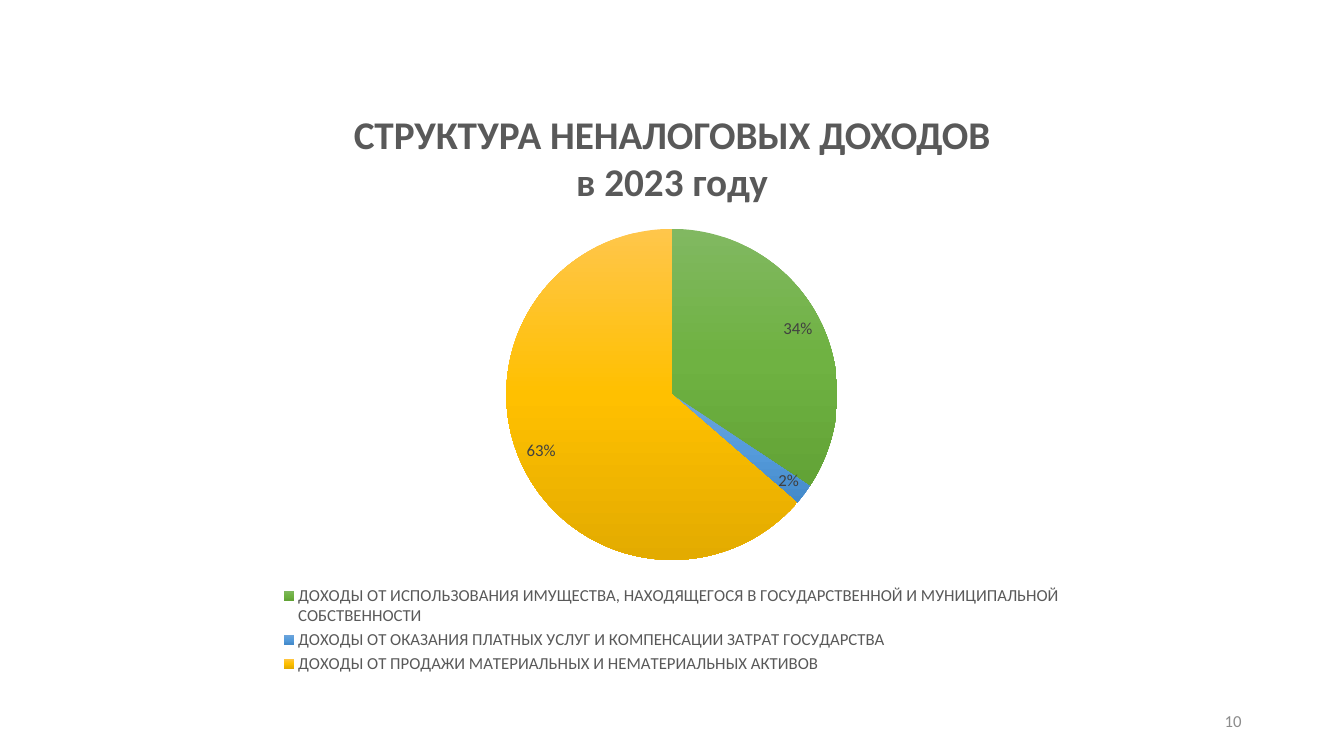
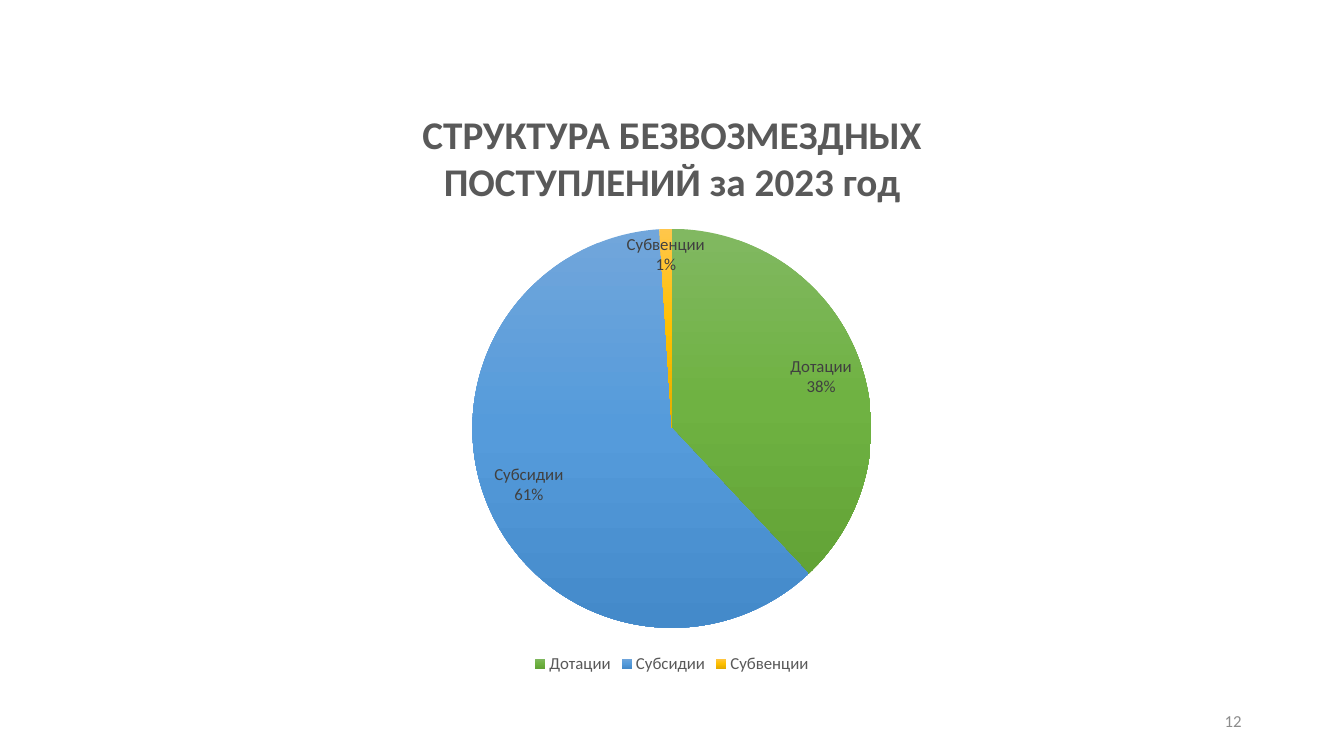
import pptx
import pptx.chart.data
import pptx.dml.color
import pptx.enum.chart
import pptx.enum.text
import pptx.oxml
import pptx.oxml.ns
import pptx.util

Pt = pptx.util.Pt
qn = pptx.oxml.ns.qn
NSDECLS = pptx.oxml.ns.nsdecls("a", "c")

FONT = "Calibri"
COLORS = {"title": "595959", "legend": "595959", "label": "404040", "number": "8C8C8C"}
SLICE_GRADIENTS = [
    ("81B861", "6FB242", "62A336"),
    ("71A6DB", "559BDB", "448ACA"),
    ("FFC64B", "FFC000", "E3AB00"),
]

# Boxes are left, top, width, height in points
SLIDE_SIZE = (960, 540)
CHART_BOX = (160, 57, 640, 427)
TITLE_BOX = (160, 76, 640, 73)
NUMBER_BOX = (678, 500.4, 216, 28.8)
PIE_TOP = 106.5  # below the top of the chart

SLIDES = [
    {
        "title": "СТРУКТУРА НЕНАЛОГОВЫХ ДОХОДОВ\vв 2023 году",
        "number": "10",
        "shares": {
            "ДОХОДЫ ОТ ИСПОЛЬЗОВАНИЯ ИМУЩЕСТВА, НАХОДЯЩЕГОСЯ В ГОСУДАРСТВЕННОЙ "
            "И МУНИЦИПАЛЬНОЙ СОБСТВЕННОСТИ": 34,
            "ДОХОДЫ ОТ ОКАЗАНИЯ ПЛАТНЫХ УСЛУГ И КОМПЕНСАЦИИ ЗАТРАТ ГОСУДАРСТВА": 2,
            "ДОХОДЫ ОТ ПРОДАЖИ МАТЕРИАЛЬНЫХ И НЕМАТЕРИАЛЬНЫХ АКТИВОВ": 63,
        },
        "diameter": 236.5,
        "name_slices": False,
    },
    {
        "title": "СТРУКТУРА БЕЗВОЗМЕЗДНЫХ\vПОСТУПЛЕНИЙ за 2023 год",
        "number": "12",
        "shares": {"Дотации": 38, "Субсидии": 61, "Субвенции": 1},
        "diameter": 285,
        "name_slices": True,
    },
]


def points(box):
    return [Pt(length) for length in box]


def set_font(font, size, color, bold=False):
    font.name = FONT
    font.size = Pt(size)
    font.bold = bold
    font.color.rgb = pptx.dml.color.RGBColor.from_string(COLORS[color])


def fill_text(sp, text, align, size, color, bold=False):
    tf = sp.text_frame
    tf.word_wrap = True
    tf.auto_size = pptx.enum.text.MSO_AUTO_SIZE.NONE
    tf.vertical_anchor = pptx.enum.text.MSO_ANCHOR.MIDDLE
    p = tf.paragraphs[0]
    p.text = text
    p.alignment = align
    set_font(p.font, size, color, bold)


def add_title(s, box, text):
    sp = s.shapes.title
    sp.left, sp.top, sp.width, sp.height = points(box)
    fill_text(sp, text, pptx.enum.text.PP_ALIGN.CENTER, 28, "title", bold=True)


def add_number(s, box, text):
    sp = s.shapes.add_textbox(*points(box))
    fill_text(sp, text, pptx.enum.text.PP_ALIGN.RIGHT, 12, "number")


def place_pie(chart, box, diameter):
    """Centre the pie across the chart and leave the chart background clear."""
    _, _, width, height = box
    layout = {
        "x": (1 - diameter / width) / 2,
        "y": PIE_TOP / height,
        "w": diameter / width,
        "h": diameter / height,
    }
    modes = '<c:layoutTarget val="inner"/><c:xMode val="edge"/><c:yMode val="edge"/>'
    sizes = "".join(f'<c:{key} val="{val:.4f}"/>' for key, val in layout.items())
    plot_area = chart.element.find(".//" + qn("c:plotArea"))
    for old in plot_area.findall(qn("c:layout")):
        plot_area.remove(old)
    plot_area.insert(0, pptx.oxml.parse_xml(
        f"<c:layout {NSDECLS}><c:manualLayout>{modes}{sizes}</c:manualLayout></c:layout>"))
    chart.element.find(qn("c:chart")).addnext(pptx.oxml.parse_xml(
        f"<c:spPr {NSDECLS}><a:noFill/><a:ln><a:noFill/></a:ln></c:spPr>"))


def color_slices(chart):
    series = chart.plots[0].series[0]
    for i in range(len(SLICE_GRADIENTS)):
        fmt = series.points[i].format
        fmt.fill.gradient()
        fmt.fill.gradient_angle = 270
        fmt.line.fill.background()
    for stops, colors in zip(chart.element.iter(qn("a:gsLst")), SLICE_GRADIENTS):
        for old in list(stops):
            stops.remove(old)
        for i, color in enumerate(colors):
            stops.append(pptx.oxml.parse_xml(
                f'<a:gs {NSDECLS} pos="{i * 50000}"><a:srgbClr val="{color}"/></a:gs>'))


def label_slices(chart, name_slices):
    plot = chart.plots[0]
    plot.has_data_labels = True
    labels = plot.data_labels
    labels.show_percentage = False
    labels.show_value = True
    labels.show_category_name = name_slices
    labels.number_format = '0"%"'
    labels.number_format_is_linked = False
    labels.position = pptx.enum.chart.XL_LABEL_POSITION.INSIDE_END
    set_font(labels.font, 12, "label")
    last_flag = chart.element.find(".//" + qn("c:dLbls") + "/" + qn("c:showBubbleSize"))
    last_flag.addnext(pptx.oxml.parse_xml(f"<c:separator {NSDECLS}>\n</c:separator>"))


def add_pie(s, box, shares, diameter, name_slices):
    data = pptx.chart.data.CategoryChartData()
    data.categories = list(shares)
    data.add_series("Series 1", list(shares.values()))
    chart = s.shapes.add_chart(
        pptx.enum.chart.XL_CHART_TYPE.PIE, *points(box), data).chart
    chart.has_title = False
    chart.font.name = FONT
    chart.font.size = Pt(10)
    chart.plots[0].vary_by_categories = True
    chart.has_legend = True
    chart.legend.position = pptx.enum.chart.XL_LEGEND_POSITION.BOTTOM
    chart.legend.include_in_layout = False
    set_font(chart.legend.font, 12, "legend")
    color_slices(chart)
    label_slices(chart, name_slices)
    place_pie(chart, box, diameter)


def add_structure_slide(prs, title, number, shares, diameter, name_slices):
    s = prs.slides.add_slide(prs.slide_layouts.get_by_name("Title Only"))
    add_title(s, TITLE_BOX, title)
    add_pie(s, CHART_BOX, shares, diameter, name_slices)
    add_number(s, NUMBER_BOX, number)


def main():
    prs = pptx.Presentation()
    prs.slide_width, prs.slide_height = points(SLIDE_SIZE)
    for content in SLIDES:
        add_structure_slide(prs, **content)
    prs.save("out.pptx")


if __name__ == "__main__":
    main()
